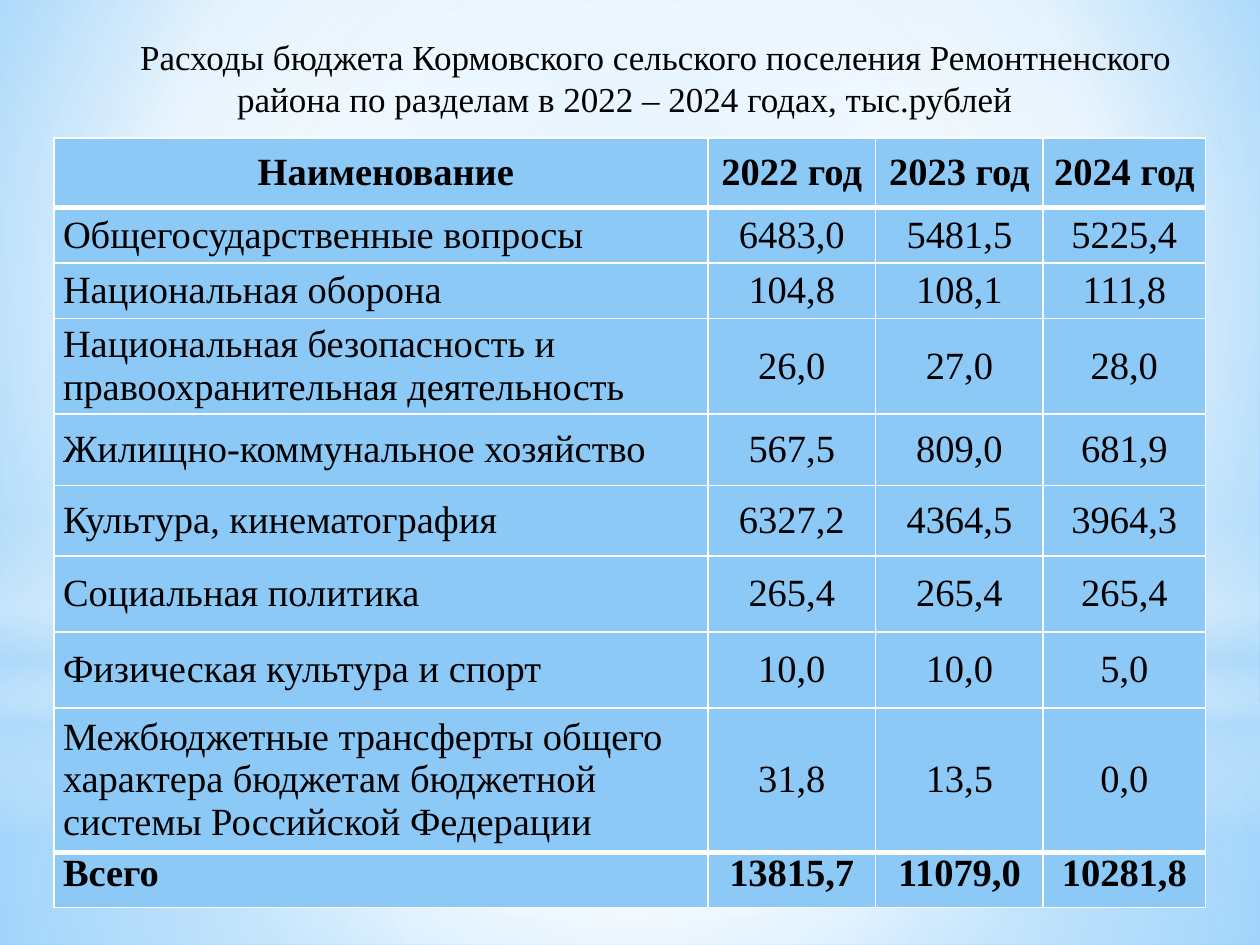
from dataclasses import dataclass

from lxml.etree import SubElement
from pptx import Presentation
from pptx.dml.color import RGBColor
from pptx.enum.shapes import MSO_SHAPE
from pptx.enum.text import MSO_ANCHOR, MSO_AUTO_SIZE, PP_ALIGN
from pptx.oxml import parse_xml
from pptx.oxml.ns import qn
from pptx.util import Cm, Pt


@dataclass(frozen=True)
class Theme:
    font: str = "Times New Roman"
    ink: str = "000000"
    white: str = "FFFFFF"
    cell: str = "8CC9F7"
    sky: str = "9ED5FF"
    deep: str = "5BB9FF"
    pale: str = "B4DCFA"
    title: int = 20
    body: int = 22
    thin: int = 1
    thick: int = 3


THEME = Theme()
NS = "http://schemas.openxmlformats.org/drawingml/2006/main"
WIDE, HIGH = 25.4, 19.05

TITLE = ("Расходы бюджета Кормовского сельского поселения Ремонтненского "
         "района по разделам в 2022 – 2024 годах, тыс.рублей")
COLS = [13.18, 3.38, 3.38, 3.27]
# Row height in cm, then the cells
ROWS = [
    (1.4, " Наименование", "2022 год", "2023 год", "2024 год"),
    (1.12, "Общегосударственные вопросы", "6483,0", "5481,5", "5225,4"),
    (1.12, "Национальная оборона", "104,8", "108,1", "111,8"),
    (1.93, "Национальная безопасность и правоохранительная деятельность",
     "26,0", "27,0", "28,0"),
    (1.44, "Жилищно-коммунальное хозяйство", "567,5", "809,0", "681,9"),
    (1.42, "Культура, кинематография", "6327,2", "4364,5", "3964,3"),
    (1.53, "Социальная политика", "265,4", "265,4", "265,4"),
    (1.53, "Физическая культура и спорт", "10,0", "10,0", "5,0"),
    (2.91, "Межбюджетные трансферты общего характера бюджетам бюджетной "
           "системы Российской Федерации", "31,8", "13,5", "0,0"),
    (1.12, "Всего", "13815,7", "11079,0", "10281,8"),
]


def put(frame, text, size=THEME.body, bold=False, align=PP_ALIGN.LEFT, indent=0):
    """Write one formatted paragraph."""
    para = frame.paragraphs[0]
    para.alignment = align
    if indent:
        para._p.get_or_add_pPr().set("indent", str(Cm(indent)))
    run = para.add_run()
    run.text = text
    run.font.name = THEME.font
    run.font.size = Pt(size)
    run.font.bold = bold
    run.font.color.rgb = RGBColor.from_string(THEME.ink)


def blend(fill, owner, stops, focus=None):
    """Set a gradient of (place, colour, alpha) stops, round if focus is given."""
    fill.gradient()
    old = next(owner.iter(qn("a:gradFill")))
    marks = "".join(
        f'<a:gs pos="{place * 1000}"><a:srgbClr val="{tone}">'
        f'<a:alpha val="{alpha * 1000}"/></a:srgbClr></a:gs>'
        for place, tone, alpha in stops)
    if focus:
        sides = " ".join(f'{k}="{v * 1000}"' for k, v in zip("ltrb", focus))
        form = f'<a:path path="circle"><a:fillToRect {sides}/></a:path>'
    else:
        form = '<a:lin ang="5400000" scaled="0"/>'
    old.getparent().replace(old, parse_xml(
        f'<a:gradFill xmlns:a="{NS}" rotWithShape="1">'
        f'<a:gsLst>{marks}</a:gsLst>{form}</a:gradFill>'))


def backdrop(slide, wide, high):
    """Sky background with four soft layers of light."""
    white, pale, mid = THEME.white, THEME.pale, (50, 50, 50, 50)
    blend(slide.background.fill, slide.element,
          [(0, THEME.sky, 100), (60, white, 100), (100, THEME.deep, 100)],
          (20, 10, 20, 60))
    split = 14.17
    layers = [
        (MSO_SHAPE.RECTANGLE, split, high - split,
         [(0, white, 91), (37, white, 76), (100, pale, 79)], mid),
        (MSO_SHAPE.RECTANGLE, 0, split,
         [(0, white, 89), (48, white, 62), (100, pale, 79)], mid),
        (MSO_SHAPE.RECTANGLE, 10.46, 6.35,
         [(0, white, 0), (29, white, 30), (45, pale, 40),
          (55, white, 26), (65, pale, 60), (100, white, 0)], None),
        (MSO_SHAPE.OVAL, 4.45, split, [(0, white, 100), (56, white, 0)], mid),
    ]
    for kind, top, tall, stops, focus in layers:
        shape = slide.shapes.add_shape(kind, 0, Cm(top), Cm(wide), Cm(tall))
        shape.shadow.inherit = False
        shape.line.fill.background()
        blend(shape.fill, shape.element.spPr, stops, focus)


def edge(cell, above, below):
    """Draw white borders; above and below are widths in points."""
    props = cell._tc.get_or_add_tcPr()
    sides = [("L", THEME.thin), ("R", THEME.thin), ("T", above), ("B", below)]
    for spot, (side, width) in enumerate(sides):
        line = SubElement(props, qn(f"a:ln{side}"), w=str(Pt(width)))
        tint = SubElement(line, qn("a:solidFill"))
        SubElement(tint, qn("a:srgbClr"), val=THEME.white)
        props.insert(spot, line)


def budget(slide, left, top, wide, high):
    """Table of spending by section and year."""
    table = slide.shapes.add_table(len(ROWS), len(COLS), Cm(left), Cm(top),
                                   Cm(wide), Cm(high)).table
    table.horz_banding = False
    for col, width in zip(table.columns, COLS):
        col.width = Cm(width)
    last = len(ROWS) - 1
    for r, (tall, *words) in enumerate(ROWS):
        table.rows[r].height = Cm(tall)
        for c, word in enumerate(words):
            cell = table.cell(r, c)
            cell.margin_left = cell.margin_right = Cm(0.18)
            cell.margin_top = cell.margin_bottom = 0
            cell.vertical_anchor = MSO_ANCHOR.TOP if r == last else MSO_ANCHOR.MIDDLE
            cell.fill.solid()
            cell.fill.fore_color.rgb = RGBColor.from_string(THEME.cell)
            edge(cell, THEME.thick if r in (1, last) else THEME.thin,
                 THEME.thick if r in (0, last - 1) else THEME.thin)
            put(cell.text_frame, word, bold=r in (0, last),
                align=PP_ALIGN.CENTER if c or r == 0 else PP_ALIGN.LEFT)


def heading(slide, left, top, wide, high):
    """Slide title."""
    frame = slide.shapes.add_textbox(Cm(left), Cm(top), Cm(wide), Cm(high)).text_frame
    frame.word_wrap = True
    frame.auto_size = MSO_AUTO_SIZE.SHAPE_TO_FIT_TEXT
    frame.vertical_anchor = MSO_ANCHOR.MIDDLE
    put(frame, TITLE, size=THEME.title, align=PP_ALIGN.CENTER, indent=1.25)


def main():
    deck = Presentation()
    deck.slide_width, deck.slide_height = Cm(WIDE), Cm(HIGH)
    slide = deck.slides.add_slide(deck.slide_layouts[6])
    backdrop(slide, WIDE, HIGH)
    budget(slide, 1.09, 2.78, sum(COLS), sum(row[0] for row in ROWS))
    heading(slide, 0.99, 0.57, 23.21, 1.97)
    deck.save("out.pptx")


if __name__ == "__main__":
    main()
